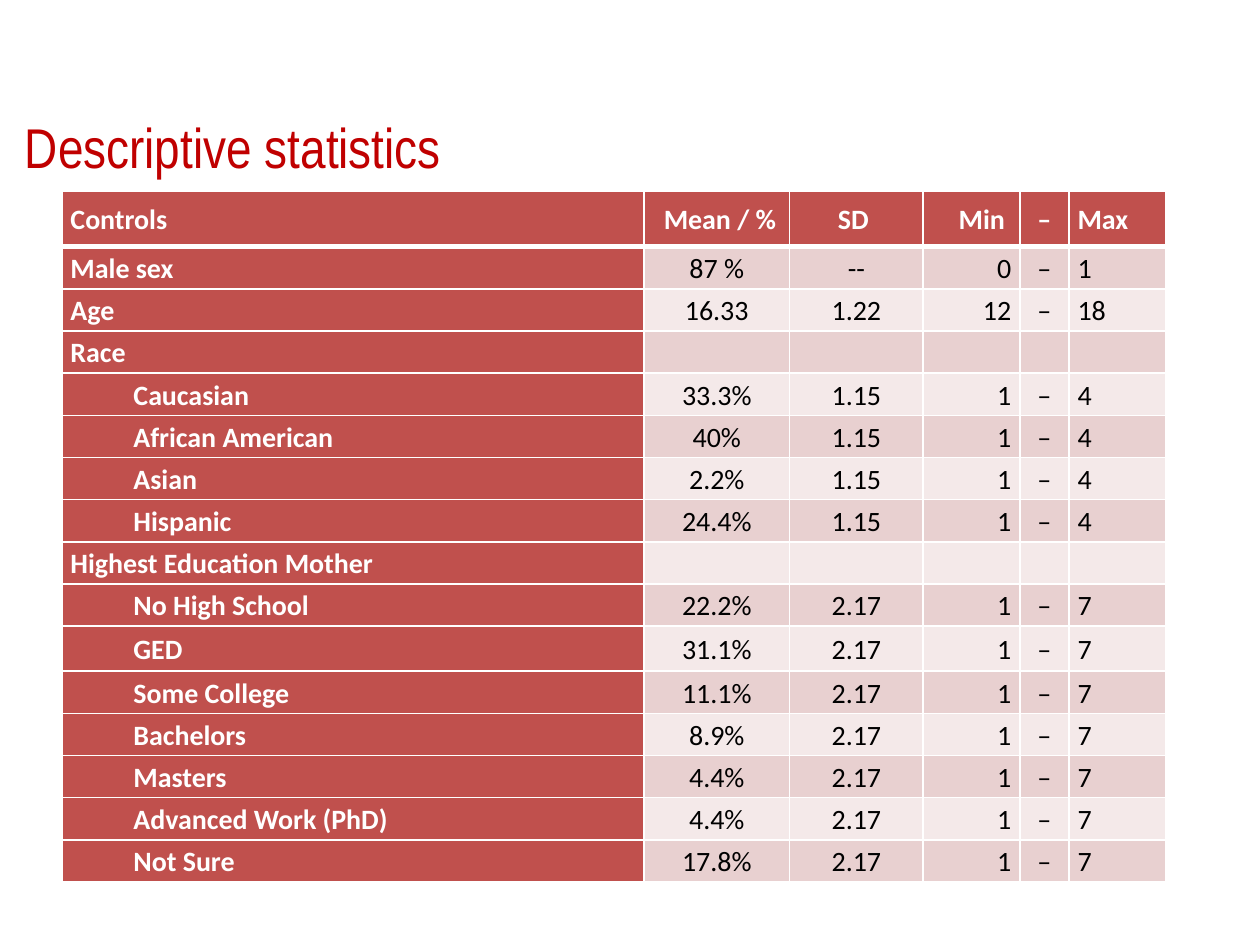
from typing import NamedTuple

from lxml.etree import SubElement
from pptx import Presentation
from pptx.dml.color import RGBColor
from pptx.enum.text import MSO_ANCHOR as Anchor, PP_ALIGN as Align
from pptx.oxml.ns import qn
from pptx.util import Pt

WHITE, BLACK, TITLE_RED = "FFFFFF", "000000", "C00000"
RED, ROSE, PALE = "C0504D", "E8D0D0", "F4E9E9"


class Column(NamedTuple):
    heading: str
    width: float
    align: Align


class Row(NamedTuple):
    label: str
    mean: str = ""
    sd: str = ""
    low: str = ""
    high: str = ""
    level: int = 0

    def texts(self) -> list[str]:
        dash = "–" if self.low else ""
        return [self.label, self.mean, self.sd, self.low, dash, self.high]


def race(label: str, share: str) -> Row:
    return Row(label, share, "1.15", "1", "4", level=1)


def education(label: str, share: str) -> Row:
    return Row(label, share, "2.17", "1", "7", level=1)


COLUMNS = [
    Column("Controls", 332.6, Align.LEFT),
    Column(" Mean / %", 83.4, Align.CENTER),
    Column("SD ", 76.2, Align.CENTER),
    Column("Min ", 55.4, Align.RIGHT),
    Column("–", 27.9, Align.CENTER),
    Column("Max", 55.2, Align.LEFT),
]
ROWS = [
    Row("Male sex", "87 %", "--", "0", "1"),
    Row("Age", "16.33", "1.22", "12", "18"),
    Row("Race"),
    race("Caucasian", "33.3%"),
    race("African American", "40%"),
    race("Asian", "2.2%"),
    race("Hispanic", "24.4%"),
    Row("Highest Education Mother"),
    education("No High School", "22.2%"),
    education("GED", "31.1%"),
    education("Some College", "11.1%"),
    education("Bachelors", "8.9%"),
    education("Masters", "4.4%"),
    education("Advanced Work (PhD)", "4.4%"),
    education("Not Sure", "17.8%"),
]
HEADER_HEIGHT, ROW_HEIGHT, GED_HEIGHT = 31.5, 24.1, 25.7


def color(value: str) -> RGBColor:
    return RGBColor.from_string(value)


def add_span(para, text: str, font: str, size: float, ink: str, bold: bool = False) -> None:
    span = para.add_run()
    span.text = text
    span.font.name = font
    span.font.size = Pt(size)
    span.font.bold = bold
    span.font.color.rgb = color(ink)


def set_indent(para, points: float) -> None:
    para._p.get_or_add_pPr().set("marL", str(Pt(points)))


def set_borders(cell, top: float = 1, bottom: float = 1) -> None:
    properties = cell._tc.get_or_add_tcPr()
    for side, width in {"L": 1, "R": 1, "T": top, "B": bottom}.items():
        line = SubElement(properties, qn(f"a:ln{side}"), w=str(Pt(width)))
        SubElement(SubElement(line, qn("a:solidFill")), qn("a:srgbClr"), val=WHITE)


def fill_cell(cell, text: str, align: Align, fill: str, level: int = 0) -> None:
    cell.fill.solid()
    cell.fill.fore_color.rgb = color(fill)
    cell.vertical_anchor = Anchor.MIDDLE
    cell.margin_left = cell.margin_right = Pt(5)
    cell.margin_top = cell.margin_bottom = Pt(0)
    if not text:
        return
    para = cell.text_frame.paragraphs[0]
    para.alignment = align
    para.line_spacing = 1.07
    if level:
        para.level = level
        set_indent(para, 36 * level)
    strong = fill == RED
    add_span(para, text, "Calibri", 16, WHITE if strong else BLACK, strong)


def add_title(page, text: str) -> None:
    box = page.shapes.add_textbox(Pt(0), Pt(49.7), Pt(559.4), Pt(67.7))
    frame = box.text_frame
    frame.word_wrap = True
    frame.vertical_anchor = Anchor.MIDDLE
    para = frame.paragraphs[0]
    set_indent(para, 7.2)
    add_span(para, text, "Arial Narrow", 32, TITLE_RED)


def add_statistics(page) -> None:
    heights = [HEADER_HEIGHT] + [
        GED_HEIGHT if row.label == "GED" else ROW_HEIGHT for row in ROWS
    ]
    width = sum(column.width for column in COLUMNS)
    table = page.shapes.add_table(
        len(heights), len(COLUMNS), Pt(35.3), Pt(109.5), Pt(width), Pt(sum(heights))
    ).table
    table.first_row = table.horz_banding = False
    for track, column in zip(table.columns, COLUMNS):
        track.width = Pt(column.width)
    for track, height in zip(table.rows, heights):
        track.height = Pt(height)

    # Header row, set off by a thick rule
    for c, column in enumerate(COLUMNS):
        cell = table.cell(0, c)
        set_borders(cell, bottom=3)
        fill_cell(cell, column.heading, column.align, RED)

    # Body rows: red labels, banded values
    for r, row in enumerate(ROWS, start=1):
        band = ROSE if r % 2 else PALE
        for c, (column, text) in enumerate(zip(COLUMNS, row.texts())):
            cell = table.cell(r, c)
            set_borders(cell, top=3 if r == 1 else 1)
            is_label = c == 0
            fill_cell(cell, text, column.align, RED if is_label else band,
                      row.level if is_label else 0)


def main() -> None:
    deck = Presentation()
    deck.slide_width, deck.slide_height = Pt(720), Pt(540)
    page = deck.slides.add_slide(deck.slide_layouts[6])
    add_title(page, "Descriptive statistics")
    add_statistics(page)
    deck.save("out.pptx")


if __name__ == "__main__":
    main()
